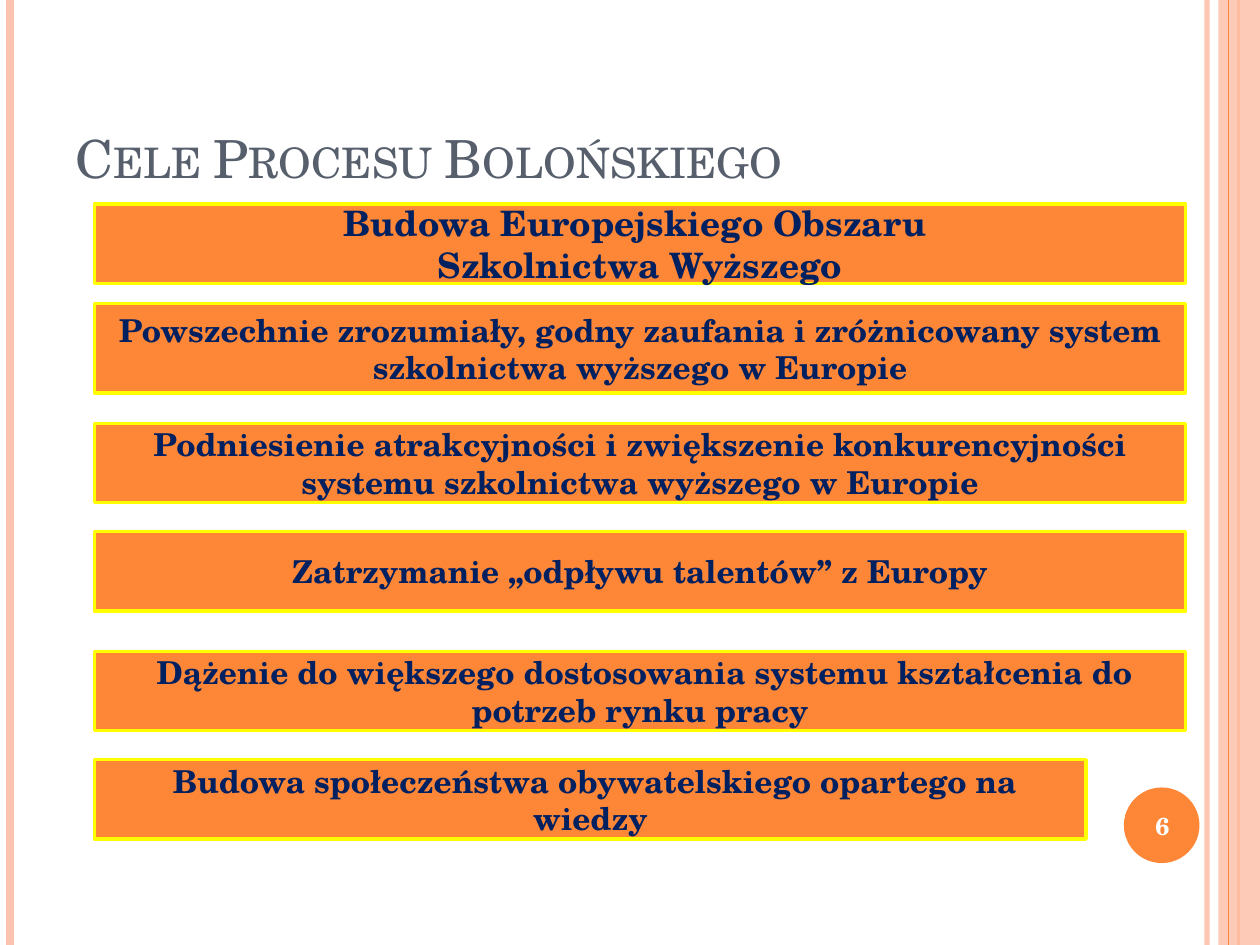
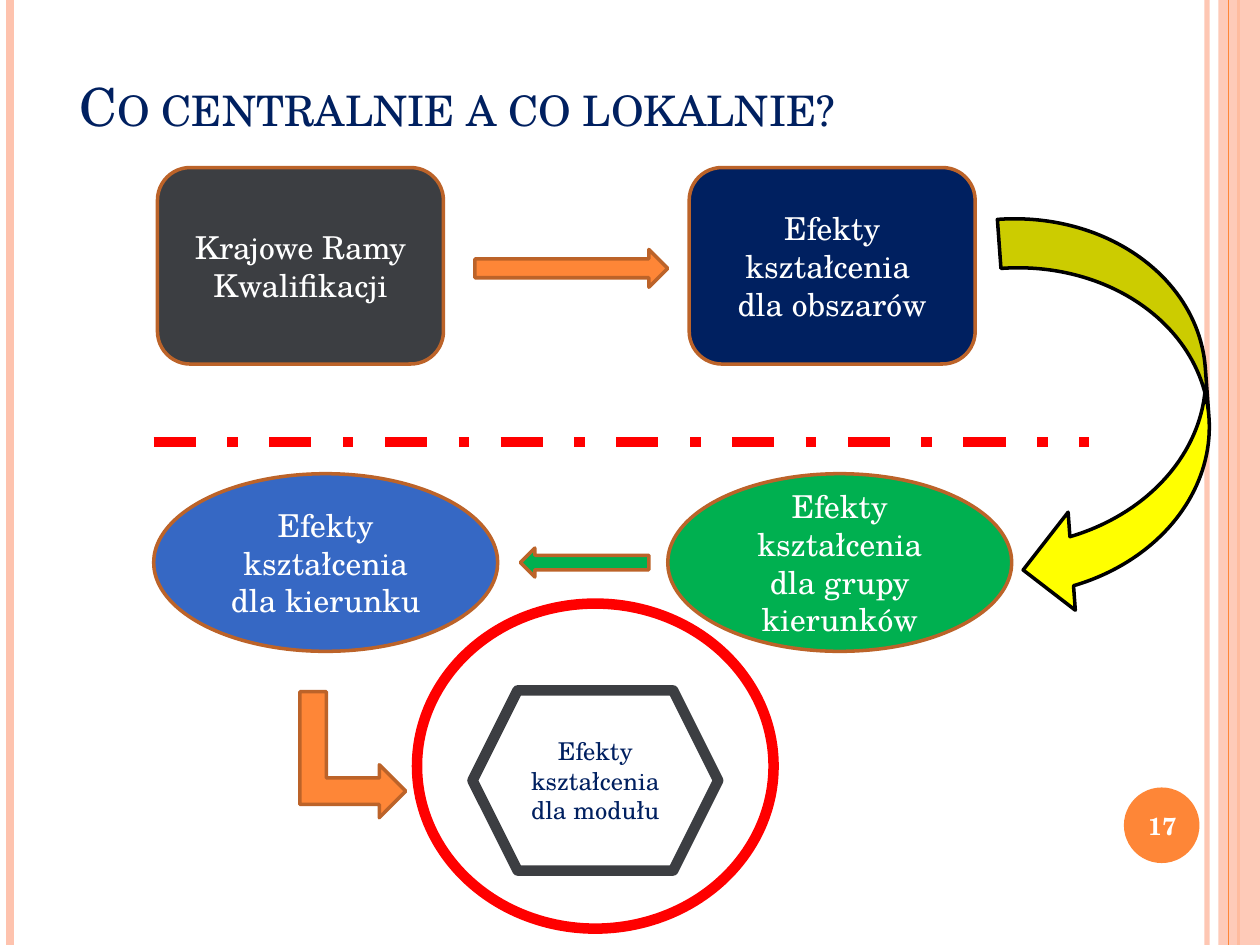
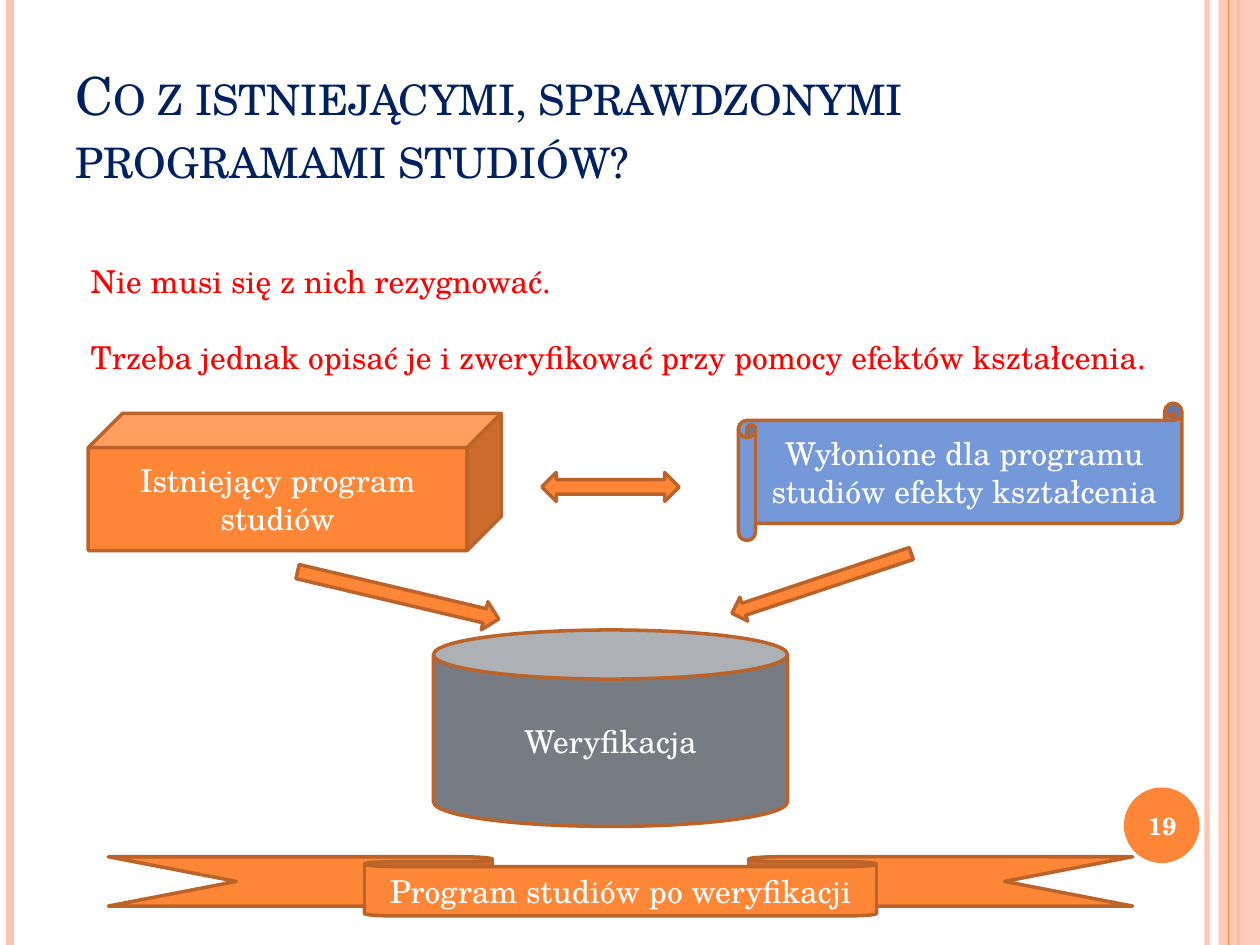
import pptx
import pptx.dml.color
import pptx.enum.dml
import pptx.enum.shapes
import pptx.enum.text
import pptx.oxml.ns
import pptx.util
from lxml import etree

Inches = pptx.util.Inches
Pt = pptx.util.Pt
RGBColor = pptx.dml.color.RGBColor
SHAPE = pptx.enum.shapes.MSO_SHAPE
ALIGN = pptx.enum.text.PP_ALIGN
ANCHOR = pptx.enum.text.MSO_ANCHOR
DASH = pptx.enum.dml.MSO_LINE
qn = pptx.oxml.ns.qn

FONT = "TeX Gyre Schola"
ORANGE = RGBColor(0xFE, 0x86, 0x37)
PEACH = RGBColor(0xFE, 0xC3, 0xAE)
RUST = RGBColor(0xBC, 0x63, 0x29)
NAVY = RGBColor(0x00, 0x20, 0x60)
SLATE = RGBColor(0x57, 0x5F, 0x6D)
CHARCOAL = RGBColor(0x3C, 0x3E, 0x42)
GRAY = RGBColor(0x77, 0x7C, 0x84)
BLUE = RGBColor(0x36, 0x68, 0xC4)
LIGHT_BLUE = RGBColor(0x75, 0x98, 0xD9)
GREEN = RGBColor(0x00, 0xB0, 0x50)
RED = RGBColor(0xFF, 0x00, 0x00)
YELLOW = RGBColor(0xFF, 0xFF, 0x00)
WHITE = RGBColor(0xFF, 0xFF, 0xFF)
BLACK = RGBColor(0x00, 0x00, 0x00)

TITLE_AT = (0.5, 0.3, 8.17, 1.25)
NUMBER_AT = (8.89, 6.27, 0.67, 0.57)

# x, colour, width in points, opacity in percent
LEFT_AND_INNER_RULES = [(9.58, PEACH, 3, 93), (0.08, PEACH, 4.5, 100), (9.83, ORANGE, 1.5, 100)]
TOP_RULE = (9.75, ORANGE, 0.75, 100)

# top, width, height, text size, paragraphs
GOALS = [
    (1.62, 8.66, 0.63, 20, ["Budowa Europejskiego Obszaru ", "Szkolnictwa Wyższego"]),
    (2.41, 8.66, 0.71, 18, ["Powszechnie zrozumiały, godny zaufania i zróżnicowany system "
                            "szkolnictwa wyższego w Europie"]),
    (3.36, 8.66, 0.63, 18, ["Podniesienie atrakcyjności i zwiększenie konkurencyjności "
                            "systemu szkolnictwa wyższego w Europie"]),
    (4.22, 8.66, 0.63, 18, ["Zatrzymanie „odpływu talentów” z Europy"]),
    (5.17, 8.66, 0.63, 18, [" Dążenie do większego dostosowania systemu kształcenia do "
                            "potrzeb rynku pracy"]),
    (6.03, 7.87, 0.63, 18, [" Budowa społeczeństwa obywatelskiego opartego na wiedzy"]),
]

# kind, place, fill, paragraphs
LEVELS = [
    (SHAPE.ROUNDED_RECTANGLE, (1.25, 1.33, 2.27, 1.56), CHARCOAL, ["Krajowe Ramy Kwalifikacji"]),
    (SHAPE.ROUNDED_RECTANGLE, (5.47, 1.33, 2.27, 1.56), NAVY,
     ["Efekty kształcenia ", "dla obszarów"]),
    (SHAPE.OVAL, (1.22, 3.76, 2.73, 1.41), BLUE, ["Efekty kształcenia dla kierunku"]),
    (SHAPE.OVAL, (5.3, 3.76, 2.73, 1.41), GREEN, ["Efekty kształcenia dla grupy kierunków"]),
]
MODULE = ["Efekty kształcenia dla modułu"]

NOTES = ["Nie musi się z nich rezygnować.",
         "Trzeba jednak opisać je i zweryfikować przy pomocy efektów kształcenia."]
STAGES = [
    (SHAPE.CUBE, (0.7, 3.28, 3.28, 1.09), ORANGE, ["Istniejący program studiów"]),
    (SHAPE.HORIZONTAL_SCROLL, (5.86, 3.2, 3.52, 1.09), LIGHT_BLUE,
     ["Wyłonione dla programu studiów efekty kształcenia"]),
    (SHAPE.CAN, (3.44, 5, 2.81, 1.56), GRAY, ["Weryfikacja"]),
    (SHAPE.DOWN_RIBBON, (0.86, 6.8, 8.13, 0.47), ORANGE, ["Program studiów po weryfikacji"]),
]

# kind, place, fill, rotation
LEVEL_ARROWS = [
    (SHAPE.RIGHT_ARROW, (3.77, 1.98, 1.53, 0.3), ORANGE, 0),
    (SHAPE.LEFT_ARROW, (4.13, 4.35, 1.02, 0.23), GREEN, 0),
    (SHAPE.BENT_UP_ARROW, (2.3, 5.57, 1, 0.84), ORANGE, 90),
]
STAGE_ARROWS = [
    (SHAPE.RIGHT_ARROW, (2.34, 4.61, 1.64, 0.23), ORANGE, 13.3),
    (SHAPE.RIGHT_ARROW, (5.77, 4.53, 1.5, 0.2), ORANGE, 161.6),
    (SHAPE.LEFT_RIGHT_ARROW, (4.3, 3.75, 1.09, 0.23), ORANGE, 0),
]


def inches(place):
    return [Inches(length) for length in place]


def write(frame, paragraphs, size, color, bold=False, align=ALIGN.CENTER, gap=0):
    """Fill a text frame; gap is the space in points between paragraphs."""
    frame.word_wrap = True
    for index, text in enumerate(paragraphs):
        para = frame.add_paragraph() if index else frame.paragraphs[0]
        para.alignment = align
        para.space_before = Pt(gap if index else 0)
        span = para.add_run()
        span.text = text
        span.font.name = FONT
        span.font.size = Pt(size)
        span.font.bold = bold
        span.font.color.rgb = color


def set_opacity(element, percent):
    color = element.find(".//" + qn("a:srgbClr"))
    etree.SubElement(color, qn("a:alpha")).set("val", str(percent * 1000))


def add_box(page, kind, place, fill=None, line=RUST, width=2, rotation=0):
    box = page.shapes.add_shape(kind, *inches(place))
    box.shadow.inherit = False
    box.rotation = rotation
    if fill is None:
        box.fill.background()
    else:
        box.fill.solid()
        box.fill.fore_color.rgb = fill
    if line is None:
        box.line.fill.background()
    else:
        box.line.color.rgb = line
        box.line.width = Pt(width)
    return box


def add_rule(page, start, end, color, width, opacity=100):
    rule = page.shapes.add_connector(
        pptx.enum.shapes.MSO_CONNECTOR.STRAIGHT, *inches(start + end))
    rule.line.color.rgb = color
    rule.line.width = Pt(width)
    etree.SubElement(rule.element.spPr, qn("a:effectLst"))
    if opacity < 100:
        set_opacity(rule.element, opacity)
    return rule


def add_side_rule(page, x, color, width, opacity):
    return add_rule(page, (x, 0), (x, 7.5), color, width, opacity)


def decorate_master(deck, page):
    """Draw the side bands and number disc on page, then move them to the master."""
    parts = [add_side_rule(page, *rule) for rule in LEFT_AND_INNER_RULES]
    band = add_box(page, SHAPE.RECTANGLE, (9.67, 0, 0.33, 7.5), PEACH, None)
    set_opacity(band.element, 87)
    parts += [band, add_side_rule(page, *TOP_RULE),
              add_box(page, SHAPE.OVAL, (8.92, 6.25, 0.6, 0.6), ORANGE, None)]
    tree = deck.slide_master.shapes.element
    for index, part in enumerate(parts):
        part.element.find(".//" + qn("p:cNvPr")).set("id", str(100 + index))
        tree.insert(2 + index, part.element)


def add_page(deck, title, number, color=NAVY, place=TITLE_AT):
    page = deck.slides.add_slide(deck.slide_layouts.get_by_name("Title Only"))
    for holder in list(page.placeholders):
        if holder.placeholder_format.idx != 0:
            holder.element.getparent().remove(holder.element)
    heading = page.shapes.title
    heading.left, heading.top, heading.width, heading.height = inches(place)
    frame = heading.text_frame
    frame.auto_size = pptx.enum.text.MSO_AUTO_SIZE.NONE
    frame.vertical_anchor = ANCHOR.BOTTOM
    write(frame, [title], 30, color, align=ALIGN.LEFT)
    heading.element.find(".//" + qn("a:rPr")).set("cap", "small")
    label = page.shapes.add_textbox(*inches(NUMBER_AT))
    label.text_frame.vertical_anchor = ANCHOR.MIDDLE
    write(label.text_frame, [number], 14, WHITE, bold=True)
    return page


def add_labelled_boxes(page, boxes):
    for kind, place, fill, paragraphs in boxes:
        write(add_box(page, kind, place, fill).text_frame, paragraphs, 18, WHITE)


def add_arrows(page, arrows):
    for kind, place, fill, rotation in arrows:
        add_box(page, kind, place, fill, rotation=rotation)


def build_goals(deck):
    page = add_page(deck, "Cele Procesu Bolońskiego", "6", SLATE)
    decorate_master(deck, page)
    for top, width, height, size, paragraphs in GOALS:
        goal = add_box(page, SHAPE.RECTANGLE, (0.75, top, width, height), ORANGE, YELLOW)
        write(goal.text_frame, paragraphs, size, NAVY, bold=True)


def build_levels(deck):
    page = add_page(deck, "Co centralnie a co lokalnie?", "17", place=(0.53, -0.11, 8.17, 1.25))
    add_labelled_boxes(page, LEVELS)
    divider = add_rule(page, (1.22, 3.51), (8.64, 3.51), RED, 6)
    divider.line.dash_style = DASH.DASH_DOT
    module = add_box(page, SHAPE.HEXAGON, (3.75, 5.48, 1.95, 1.43), WHITE, CHARCOAL, 6)
    write(module.text_frame, MODULE, 14, NAVY)
    add_arrows(page, LEVEL_ARROWS)
    add_box(page, SHAPE.CURVED_LEFT_ARROW, (8.03, 1.68, 1.56, 3.18), YELLOW, BLACK,
            rotation=355.8)
    add_box(page, SHAPE.OVAL, (3.31, 4.79, 2.83, 2.58), None, RED, 6)


def build_verification(deck):
    page = add_page(deck, "Co z istniejącymi, sprawdzonymi programami studiów?", "19")
    notes = page.shapes.add_textbox(*inches((0.62, 2.03, 8.98, 1.01)))
    write(notes.text_frame, NOTES, 18, RED, align=ALIGN.LEFT, gap=21.7)
    add_labelled_boxes(page, STAGES)
    add_arrows(page, STAGE_ARROWS)


def main():
    deck = pptx.Presentation()
    deck.slide_width, deck.slide_height = inches((10, 7.5))
    build_goals(deck)
    build_levels(deck)
    build_verification(deck)
    deck.save("out.pptx")


if __name__ == "__main__":
    main()
